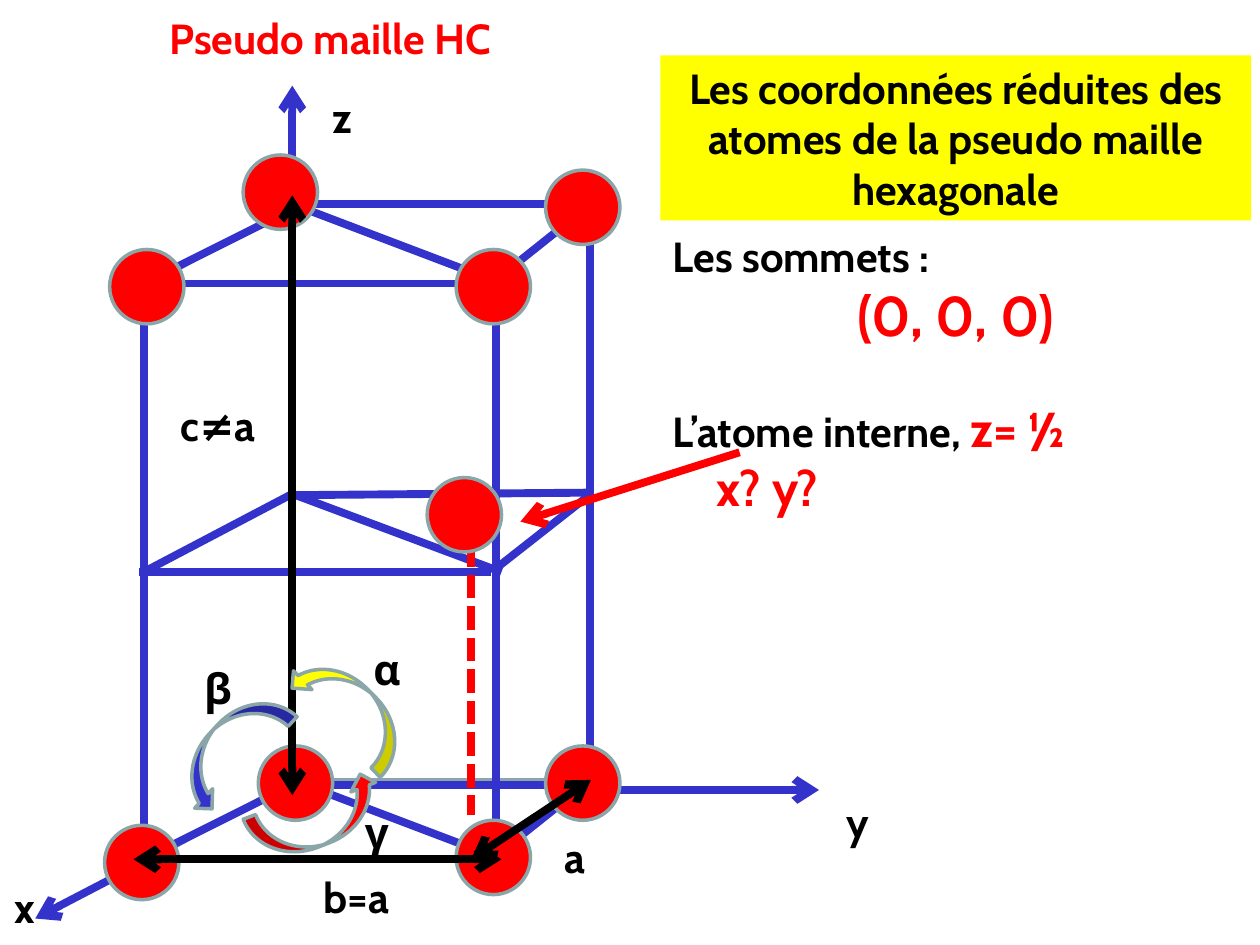
import dataclasses
import pptx
import pptx.util
import pptx.dml.color
import pptx.enum.dml
import pptx.enum.shapes
import pptx.enum.text
import pptx.oxml.ns
import lxml.etree

SHAPE = pptx.enum.shapes.MSO_SHAPE
ALIGN = pptx.enum.text.PP_ALIGN
ANCHOR = pptx.enum.text.MSO_ANCHOR
CELL = pptx.util.Inches(0.1)


@dataclasses.dataclass(frozen=True)
class Theme:
    face: str = "Cabin"
    blue: str = "3333CC"
    red: str = "FF0000"
    black: str = "000000"
    white: str = "FFFFFF"
    yellow: str = "FFFF00"
    rim: str = "8AA6A8"
    body: int = 24
    large: int = 28
    huge: int = 32
    thick: float = 4.5
    thin: float = 2


THEME = Theme()


def grid(*cells):
    return [round(cell * CELL) for cell in cells]


def paint(shape, fill=None, line=None, width=THEME.thin):
    shape.shadow.inherit = False
    if fill:
        shape.fill.solid()
        shape.fill.fore_color.rgb = pptx.dml.color.RGBColor.from_string(fill)
    else:
        shape.fill.background()
    if line:
        shape.line.color.rgb = pptx.dml.color.RGBColor.from_string(line)
        shape.line.width = pptx.util.Pt(width)
    else:
        shape.line.fill.background()


def add_form(slide, kind, box, fill=None, line=None, width=THEME.thin, turn=0):
    shape = slide.shapes.add_shape(kind, *grid(*box))
    paint(shape, fill, line, width)
    shape.rotation = turn
    return shape


def add_panel(slide, top, low):
    first, *rest = [grid(*spot) for spot in
                    ((23.2, top), (12.2, low), (39, low), (46.9, top))]
    form = slide.shapes.build_freeform(*first)
    form.add_line_segments(rest, close=True)
    paint(form.convert_to_shape(), THEME.white, THEME.rim)


def add_line(slide, start, end, color=THEME.blue, heads=(), dash=False):
    line = slide.shapes.add_connector(
        pptx.enum.shapes.MSO_CONNECTOR.STRAIGHT, *grid(*start, *end))
    line.line.color.rgb = pptx.dml.color.RGBColor.from_string(color)
    line.line.width = pptx.util.Pt(THEME.thick)
    if dash:
        line.line.dash_style = pptx.enum.dml.MSO_LINE.SQUARE_DOT
    edge = line.line._get_or_add_ln()
    for head in heads:
        lxml.etree.SubElement(edge, pptx.oxml.ns.qn("a:" + head), type="arrow")
    props = line._element.spPr
    lxml.etree.SubElement(props, pptx.oxml.ns.qn("a:effectLst"))


def style(font, color, size):
    font.name = THEME.face
    font.bold = True
    font.size = pptx.util.Pt(size)
    font.color.rgb = pptx.dml.color.RGBColor.from_string(color)


def add_label(slide, text, box, color=THEME.black, fill=THEME.white):
    if fill:
        label = add_form(slide, SHAPE.RECTANGLE, box, fill)
    else:
        label = slide.shapes.add_textbox(*grid(*box))
    frame = label.text_frame
    frame.word_wrap = True
    frame.vertical_anchor = ANCHOR.MIDDLE
    para = frame.paragraphs[0]
    para.text = text
    para.alignment = ALIGN.CENTER
    style(para.font, color, THEME.body)


def add_atom(slide, left, top):
    add_form(slide, SHAPE.OVAL, (left, top, 5.9, 5.9), THEME.red, THEME.rim)


def add_net(slide, top, low, back):
    add_line(slide, (39.8, low), (23.2, top))
    add_line(slide, (back, top), (11.4, low))
    add_line(slide, (46.9, top), (39, low))


def draw_axes(slide):
    add_label(slide, "x", (-0.4, 69.5, 4.7, 5))
    for start, end in (((23.2, 31.2), (23.2, 6.8)),
                       ((22.4, 62.7), (2.8, 72.9)),
                       ((40.6, 62.7), (65, 62.7))):
        add_line(slide, start, end, heads=["tailEnd"])


def draw_cell(slide):
    for top, low in ((16.2, 22.5), (61.9, 68.2)):
        add_panel(slide, top, low)
    for box in ((11.4, 22.5, 28, 45.7), (23.2, 16.2, 23.6, 46.1)):
        add_form(slide, SHAPE.RECTANGLE, box, None, THEME.blue, THEME.thick)
    for top, low, back in ((16.2, 22.5, 24), (61.9, 68.2, 24), (39.2, 45.4, 23.2)):
        add_net(slide, top, low, back)
    add_line(slide, (23.2, 39.3), (46.8, 39.1))
    add_line(slide, (11, 45.4), (39, 45.4))
    for spot in ((43.3, 13.5), (19.3, 12.3), (36.2, 19.8), (8.7, 19.8),
                 (43.3, 59.2), (20.5, 59.2), (36.2, 65.1), (8.3, 65.5)):
        add_atom(slide, *spot)
    add_line(slide, (37.4, 40.6), (37.4, 64.7), THEME.red, dash=True)
    add_atom(slide, 33.9, 37.9)


def draw_sizes(slide):
    for start, end, text, box in (
            ((10.6, 68.2), (39.8, 68.2), "b=a", (23.2, 68.7, 10.2, 5)),
            ((37.4, 68.2), (46.9, 61.9), "a", (43.7, 65.5, 3.9, 5)),
            ((23.2, 15.5), (23.2, 63.1), "c≠a", (12.2, 31.2, 10.2, 5))):
        add_line(slide, start, end, THEME.black, ["headEnd", "tailEnd"])
        add_label(slide, text, box)


def draw_notes(slide):
    box = add_form(slide, SHAPE.RECTANGLE, (52.4, 17.8, 46.9, 27.9), THEME.white)
    frame = box.text_frame
    frame.word_wrap = True
    frame.vertical_anchor = ANCHOR.TOP
    rows = (
        (ALIGN.JUSTIFY, [("Les sommets :", THEME.black, THEME.body)]),
        (ALIGN.CENTER, [("(0, 0, 0)", THEME.red, THEME.huge)]),
        (ALIGN.JUSTIFY, [("L’atome interne, ", THEME.black, THEME.body),
                         ("z= ½", THEME.red, THEME.large)]),
        (ALIGN.JUSTIFY, [("x? y?", THEME.red, THEME.large)]),
    )
    for place, (align, runs) in enumerate(rows):
        para = frame.add_paragraph() if place else frame.paragraphs[0]
        para.alignment = align
        for text, color, size in runs:
            run = para.add_run()
            run.text = text
            style(run.font if len(runs) > 1 else para.font, color, size)
    frame.paragraphs[2].space_before = pptx.util.Pt(29)
    frame.paragraphs[3]._p.get_or_add_pPr().set("marL", str(grid(3.5)[0]))


def draw_angles(slide):
    for text, spot, bend, turn, fill in (
            ("α", (25.6, 50.6), (22.3, 54.2), 225.3, THEME.yellow),
            ("β", (12.2, 52.1), (12.8, 57.4), 132.7, THEME.blue),
            ("γ", (24.8, 63.5), (19.7, 62.9), 338.9, THEME.red)):
        add_label(slide, text, (*spot, 10.2, 5), fill=None)
        add_form(slide, SHAPE.CURVED_UP_ARROW, (*bend, 11, 4.2),
                 fill, THEME.rim, turn=turn)


def main():
    deck = pptx.Presentation()
    deck.slide_width, deck.slide_height = grid(100, 75)
    slide = deck.slides.add_slide(deck.slide_layouts[6])
    draw_axes(slide)
    draw_cell(slide)
    add_label(slide, "Pseudo maille HC", (5.9, 0.5, 40.6, 5), THEME.red)
    add_label(slide, "Les coordonnées réduites des atomes de la pseudo maille hexagonale",
              (52.4, 4.4, 46.9, 13.1), fill=THEME.yellow)
    add_label(slide, "y", (65.7, 62.7, 4.7, 5))
    add_label(slide, "z", (24.8, 6.8, 4.7, 5))
    draw_sizes(slide)
    draw_notes(slide)
    draw_angles(slide)
    add_line(slide, (58.7, 35.9), (41.3, 41.4), THEME.red, ["tailEnd"])
    deck.save("out.pptx")


if __name__ == "__main__":
    main()
